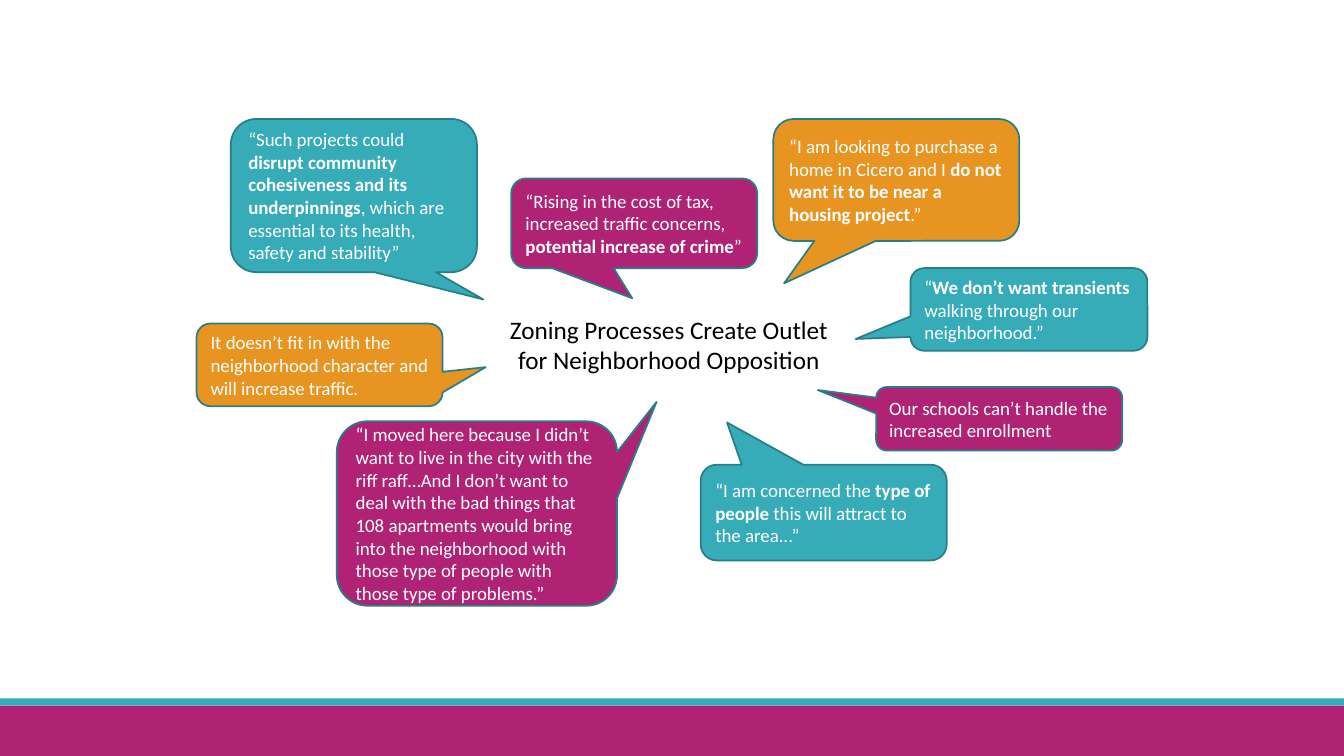
import pptx
import pptx.dml.color
import pptx.enum.shapes
import pptx.enum.text
import pptx.util
from pptx.util import Inches

MAGENTA, TEAL, ORANGE = "B02273", "36ACB8", "E89420"
OUTLINE, WHITE, BLACK = "287F88", "FFFFFF", "000000"
SHAPES = pptx.enum.shapes.MSO_SHAPE

# Box in inches, tail tip as a share of the box size from its centre,
# fill, and text pieces that alternate regular and bold.
QUOTES = [
    ((5.07, 1.77, 2.44, 0.89), (-0.008, 0.836), MAGENTA,
     ["“Rising in the cost of tax, increased traffic concerns, ",
      "potential increase of crime", "”"]),
    ((6.95, 4.61, 2.44, 0.95), (-0.393, -0.941), TEAL,
     ["“I am concerned the ", "type of people ",
      "this will attract to the area...”"]),
    ((7.67, 1.18, 2.44, 1.21), (-0.456, 0.848), ORANGE,
     ["“I am looking to purchase a home in Cicero and I ",
      "do not want it to be near a housing project", ".”"]),
    ((2.29, 1.18, 2.44, 1.52), (0.526, 0.678), TEAL,
     ["“Such projects could ",
      "disrupt community cohesiveness and its underpinnings",
      ", which are essential to its health, safety and stability”"]),
    ((3.34, 4.18, 2.78, 1.83), (0.641, -0.605), MAGENTA,
     ["“I moved here because I didn’t want to live in the city with the "
      "riff raff…And I don’t want to deal with the bad things that 108 "
      "apartments would bring into the neighborhood with those type of "
      "people with those type of problems.”"]),
    ((9.03, 2.66, 2.35, 0.82), (-0.731, 0.357), TEAL,
     ["“", "We don’t want transients", " walking through our neighborhood.”"]),
    ((8.69, 3.84, 2.44, 0.63), (-0.737, -0.452), MAGENTA,
     ["Our schools can’t handle the increased enrollment"]),
    ((1.95, 3.21, 2.44, 0.82), (0.675, 0.028), ORANGE,
     ["It doesn’t fit in with the neighborhood character and will increase "
      "traffic."]),
]


def color(hex_string):
    return pptx.dml.color.RGBColor.from_string(hex_string)


def add_filled_shape(slide, kind, box, fill):
    shape = slide.shapes.add_shape(kind, *map(Inches, box))
    shape.shadow.inherit = False
    shape.fill.solid()
    shape.fill.fore_color.rgb = color(fill)
    shape.line.fill.background()
    return shape


def set_font(paragraph, size, hex_string):
    paragraph.font.name = "Calibri"
    paragraph.font.size = pptx.util.Pt(size)
    paragraph.font.color.rgb = color(hex_string)


def add_footer(slide, box):
    """Fill the box with a magenta band under a thin teal stripe."""
    left, top, width, height = box
    stripe = 0.07
    add_filled_shape(slide, SHAPES.RECTANGLE,
                     (left, top + stripe, width, height - stripe), MAGENTA)
    add_filled_shape(slide, SHAPES.RECTANGLE, (left, top, width, stripe), TEAL)


def add_quote(slide, box, tip, fill, pieces):
    callout = add_filled_shape(slide, SHAPES.ROUNDED_RECTANGULAR_CALLOUT, box, fill)
    callout.line.color.rgb = color(OUTLINE)
    callout.line.width = pptx.util.Pt(1.25)
    callout.adjustments[0], callout.adjustments[1] = tip
    frame = callout.text_frame
    frame.word_wrap = True
    frame.vertical_anchor = pptx.enum.text.MSO_ANCHOR.MIDDLE
    paragraph = frame.paragraphs[0]
    paragraph.alignment = pptx.enum.text.PP_ALIGN.LEFT
    set_font(paragraph, 13.5, WHITE)
    for index, piece in enumerate(pieces):
        run = paragraph.add_run()
        run.text = piece
        run.font.bold = index % 2 == 1


def add_topic(slide, box, text):
    frame = slide.shapes.add_textbox(*map(Inches, box)).text_frame
    frame.word_wrap = True
    frame.auto_size = pptx.enum.text.MSO_AUTO_SIZE.SHAPE_TO_FIT_TEXT
    paragraph = frame.paragraphs[0]
    paragraph.text = text
    paragraph.alignment = pptx.enum.text.PP_ALIGN.CENTER
    set_font(paragraph, 18, BLACK)


def main():
    presentation = pptx.Presentation()
    presentation.slide_width = Inches(13.33)
    presentation.slide_height = Inches(7.5)
    slide = presentation.slides.add_slide(presentation.slide_layouts[6])
    add_footer(slide, (0, 6.93, 13.33, 0.57))
    add_topic(slide, (4.95, 3.07, 3.37, 0.71),
              "Zoning Processes Create Outlet for Neighborhood Opposition")
    for quote in QUOTES:
        add_quote(slide, *quote)
    presentation.save("out.pptx")


if __name__ == "__main__":
    main()
